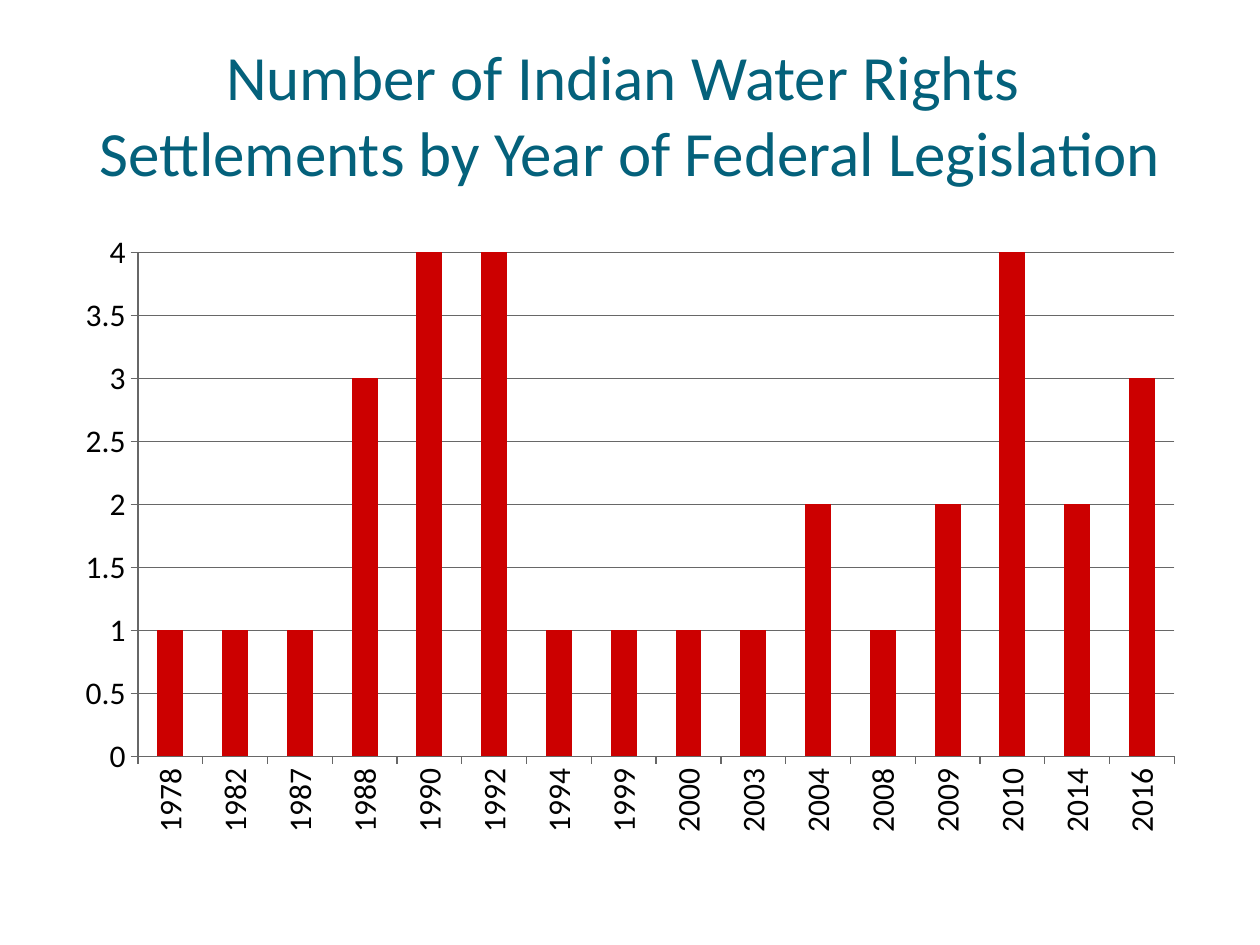
"""Build a slide charting Indian water rights settlements by year of legislation."""
from pptx import Presentation
from pptx.chart.data import CategoryChartData
from pptx.dml.color import RGBColor
from pptx.enum.chart import XL_CHART_TYPE, XL_TICK_MARK
from pptx.enum.text import MSO_ANCHOR, PP_ALIGN
from pptx.util import Pt

COLUMNS = XL_CHART_TYPE.COLUMN_CLUSTERED
TICK_OUTSIDE = XL_TICK_MARK.OUTSIDE
TICK_NONE = XL_TICK_MARK.NONE
BOTTOM = MSO_ANCHOR.BOTTOM
CENTER = PP_ALIGN.CENTER
PX = 914400 // 126
THEME = {
    "font": "Calibri",
    "chart_font": "Vollkorn",
    "title_size": Pt(36),
    "label_size": Pt(18),
    "line_width": Pt(0.75),
    "title": RGBColor(0x04, 0x61, 0x7B),
    "label": RGBColor(0, 0, 0),
    "line": RGBColor(0x67, 0x67, 0x67),
    "bar": RGBColor(0xCC, 0, 0),
}
SETTLEMENTS = {
    1978: 1, 1982: 1, 1987: 1, 1988: 3, 1990: 4, 1992: 4, 1994: 1, 1999: 1,
    2000: 1, 2003: 1, 2004: 2, 2008: 1, 2009: 2, 2010: 4, 2014: 2, 2016: 3,
}


def style_font(font, name, size, color):
    font.name = name
    font.size = size
    font.color.rgb = color


def style_line(line):
    line.color.rgb = THEME["line"]
    line.width = THEME["line_width"]


presentation = Presentation()
presentation.slide_width = 1260 * PX
presentation.slide_height = 945 * PX
slide = presentation.slides.add_slide(presentation.slide_layouts[6])

title = slide.shapes.add_textbox(63 * PX, 32 * PX, 1134 * PX, 157 * PX)
frame = title.text_frame
frame.word_wrap = True
frame.vertical_anchor = BOTTOM
frame.margin_left = frame.margin_right = frame.margin_bottom = 0
frame.margin_top = 6 * PX
paragraph = frame.paragraphs[0]
paragraph.text = "Number of Indian Water Rights \vSettlements by Year of Federal Legislation"
paragraph.alignment = CENTER
style_font(paragraph.font, THEME["font"], THEME["title_size"], THEME["title"])

data = CategoryChartData()
data.categories = [str(year) for year in SETTLEMENTS]
data.add_series("Series 1", SETTLEMENTS.values())
chart = slide.shapes.add_chart(
    COLUMNS, 63 * PX, 221 * PX, 1134 * PX, 624 * PX, data
).chart
chart.has_title = False
chart.has_legend = False
style_font(chart.font, THEME["chart_font"], THEME["label_size"], THEME["label"])

plot = chart.plots[0]
plot.gap_width = 150
plot.vary_by_categories = False
bars = plot.series[0]
bars.format.fill.solid()
bars.format.fill.fore_color.rgb = THEME["bar"]

for axis in (chart.category_axis, chart.value_axis):
    axis.major_tick_mark = TICK_OUTSIDE
    axis.minor_tick_mark = TICK_NONE
    style_font(axis.tick_labels.font, THEME["font"], THEME["label_size"], THEME["label"])
    style_line(axis.format.line)

year_label_body = chart.category_axis._element.txPr.bodyPr
year_label_body.set("rot", "-5400000")
year_label_body.set("vert", "horz")

chart.value_axis.minimum_scale = 0
chart.value_axis.maximum_scale = 4
chart.value_axis.major_unit = 0.5
chart.value_axis.has_major_gridlines = True
style_line(chart.value_axis.major_gridlines.format.line)

presentation.save("out.pptx")
